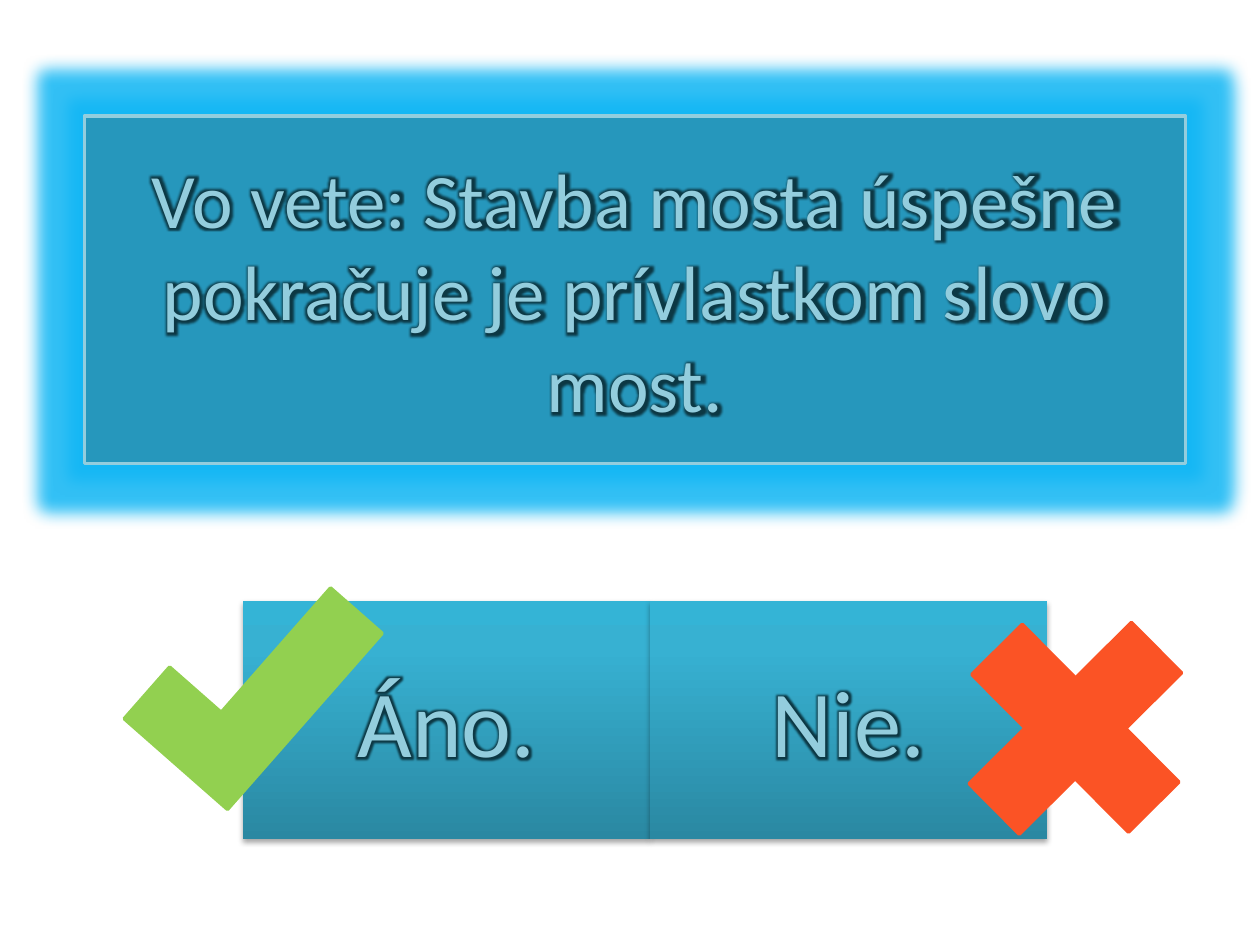
from dataclasses import dataclass

import pptx
import pptx.dml.color
import pptx.enum.shapes
import pptx.enum.text
import pptx.oxml
import pptx.oxml.ns
import pptx.util
from lxml import etree

Inches, Pt = pptx.util.Inches, pptx.util.Pt
RGBColor = pptx.dml.color.RGBColor
MSO_SHAPE = pptx.enum.shapes.MSO_SHAPE
qn = pptx.oxml.ns.qn

PANEL = RGBColor(0x31, 0x85, 0x9C)
PALE = RGBColor(0x93, 0xCD, 0xDD)
PANEL_GLOW = RGBColor(0x10, 0xB6, 0xF4)
TEXT_GLOW = RGBColor(0x0C, 0x38, 0x44)
BLACK = RGBColor(0, 0, 0)
GREEN = RGBColor(0x92, 0xD0, 0x50)
RED = RGBColor(0xFB, 0x53, 0x25)
BUTTON_STOPS = (
    (0, RGBColor(0x2A, 0x88, 0xA2)),
    (80, RGBColor(0x37, 0xB1, 0xD2)),
    (100, RGBColor(0x34, 0xB4, 0xD6)),
)


@dataclass
class Button:
    text: str
    left: float
    width: float


@dataclass
class Mark:
    preset: str
    box: tuple[float, float, float, float]
    rotation: float
    color: RGBColor


BUTTONS = [Button("Áno.", 1.93, 3.23), Button("Nie.", 5.16, 3.15)]
MARKS = [
    Mark("mathPlus", (7.3, 4.58, 2.47, 2.4), 315.2, RED),
    Mark("corner", (1.08, 4.82, 1.86, 1.09), 311.3, GREEN),
]


def add_child(parent, tag: str, **attrs):
    return etree.SubElement(parent, qn(tag), {k: str(v) for k, v in attrs.items()})


def add_color(parent, color: RGBColor, alpha: int = 100) -> None:
    clr = add_child(parent, "a:srgbClr", val=color)
    if alpha < 100:
        add_child(clr, "a:alpha", val=alpha * 1000)


def add_glow(effects, color: RGBColor, radius: float, alpha: int) -> None:
    add_color(add_child(effects, "a:glow", rad=Pt(radius)), color, alpha)


def add_rectangle(slide, box: tuple[float, float, float, float]):
    sp = slide.shapes.add_shape(MSO_SHAPE.RECTANGLE, *(Inches(v) for v in box))
    sp.shadow.inherit = False
    return sp


def set_outline(sp, color: RGBColor) -> None:
    sp.line.color.rgb = color
    sp.line.width = Pt(2)


def set_text(sp, text: str, size: int) -> None:
    """Write centred pale text with a thin outline and a dark glow."""
    tf = sp.text_frame
    tf.text = text
    tf.word_wrap = True
    tf.vertical_anchor = pptx.enum.text.MSO_ANCHOR.MIDDLE
    p = tf.paragraphs[0]
    p.alignment = pptx.enum.text.PP_ALIGN.CENTER
    r = p.runs[0]
    r.font.size = Pt(size)
    r.font.name = "Calibri"
    r.font.color.rgb = PALE
    props = r._r.get_or_add_rPr()
    ln = pptx.oxml.parse_xml(
        f'<a:ln {pptx.oxml.ns.nsdecls("a")} w="{Pt(0.75)}"><a:solidFill/></a:ln>'
    )
    add_color(ln[0], PALE)
    props.insert(0, ln)
    effects = add_child(props, "a:effectLst")
    props.find(qn("a:solidFill")).addnext(effects)
    add_glow(effects, TEXT_GLOW, 5, 100)


def add_question(slide, text: str) -> None:
    sp = add_rectangle(slide, (0.67, 0.92, 8.74, 2.76))
    sp.fill.solid()
    sp.fill.fore_color.rgb = PANEL
    props = sp._element.spPr
    add_child(props.find(qn("a:solidFill"))[0], "a:alpha", val=63000)
    set_outline(sp, PALE)
    add_glow(props.find(qn("a:effectLst")), PANEL_GLOW, 18, 85)
    set_text(sp, text, 44)


def add_button(slide, button: Button) -> None:
    sp = add_rectangle(slide, (button.left, 4.77, button.width, 1.89))
    sp.fill.gradient()
    sp.fill.gradient_angle = 90
    props = sp._element.spPr
    stops = props.find(qn("a:gradFill")).find(qn("a:gsLst"))
    for stop in list(stops):
        stops.remove(stop)
    for pos, color in BUTTON_STOPS:
        add_color(add_child(stops, "a:gs", pos=pos * 1000), color)
    sp.line.fill.background()
    shadow = add_child(
        props.find(qn("a:effectLst")), "a:outerShdw",
        blurRad=Pt(3.1), dist=Pt(1.8), dir=90 * 60000, rotWithShape=0,
    )
    add_color(shadow, BLACK, 35)
    set_text(sp, button.text, 54)


def add_mark(slide, mark: Mark) -> None:
    """Draw a rotated preset, named in XML because MSO_SHAPE lacks "corner"."""
    sp = add_rectangle(slide, mark.box)
    sp._element.spPr.find(qn("a:prstGeom")).set("prst", mark.preset)
    sp.rotation = mark.rotation
    sp.fill.solid()
    sp.fill.fore_color.rgb = mark.color
    set_outline(sp, mark.color)


def main() -> None:
    prs = pptx.Presentation()
    prs.slide_width, prs.slide_height = Inches(10), Inches(7.5)
    slide = prs.slides.add_slide(prs.slide_layouts[6])
    add_question(
        slide, "Vo vete: Stavba mosta úspešne pokračuje je prívlastkom slovo most."
    )
    for button in BUTTONS:
        add_button(slide, button)
    for mark in MARKS:
        add_mark(slide, mark)
    prs.save("out.pptx")


if __name__ == "__main__":
    main()
